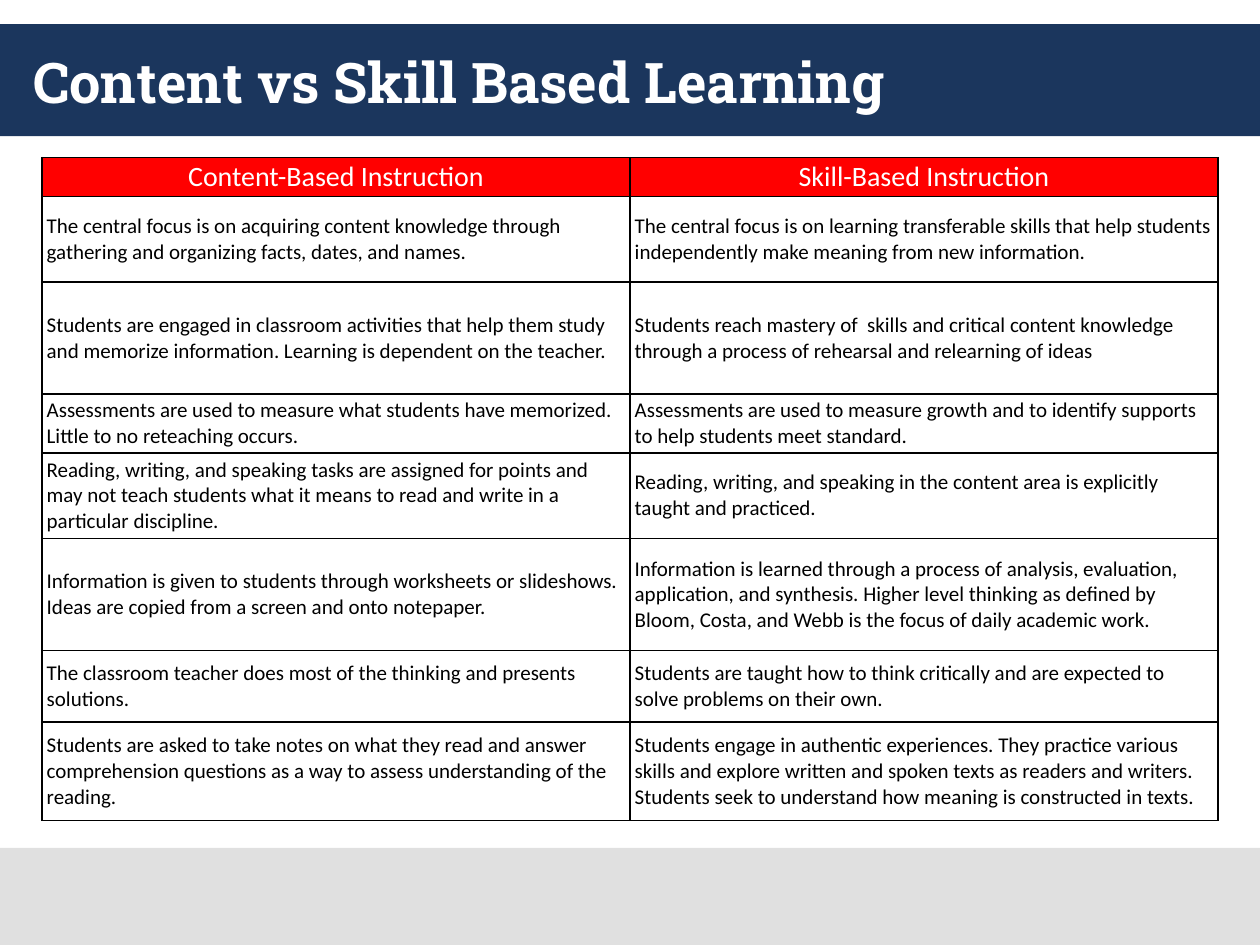
"""Build a slide with a table comparing content-based and skill-based instruction."""
from dataclasses import dataclass

from lxml import etree
from pptx import Presentation
from pptx.dml.color import RGBColor
from pptx.enum.shapes import MSO_SHAPE
from pptx.enum.text import MSO_ANCHOR, PP_ALIGN
from pptx.oxml.ns import qn
from pptx.util import Pt

RECTANGLE = MSO_SHAPE.RECTANGLE
MIDDLE = MSO_ANCHOR.MIDDLE
LEFT, CENTER = PP_ALIGN.LEFT, PP_ALIGN.CENTER


@dataclass(frozen=True)
class Theme:
    navy: str = "1B365D"
    grey: str = "E0E0E0"
    red: str = "FF0000"
    white: str = "FFFFFF"
    black: str = "000000"
    title_font: str = "Roboto Slab"
    table_font: str = "Calibri"
    title_size: int = 32
    header_size: int = 16
    body_size: int = 12


THEME = Theme()
SLIDE_WIDTH, SLIDE_HEIGHT = 720, 540
TABLE_LEFT, TABLE_TOP = 24, 90
TABLE_WIDTH = SLIDE_WIDTH - 2 * TABLE_LEFT
ROW_HEIGHTS = [22.3, 49, 64, 33.5, 49, 64, 41, 56.2]
BANDS = [(13.8, 64, THEME.navy), (484.5, 55.5, THEME.grey)]
ROWS = [
    ("Content-Based Instruction", "Skill-Based Instruction"),
    ("The central focus is on acquiring content knowledge through gathering and organizing facts, dates, and names.",
     "The central focus is on learning transferable skills that help students independently make meaning from new "
     "information."),
    ("Students are engaged in classroom activities that help them study and memorize information. Learning is "
     "dependent on the teacher.",
     "Students reach mastery of  skills and critical content knowledge through a process of rehearsal and relearning "
     "of ideas"),
    ("Assessments are used to measure what students have memorized. Little to no reteaching occurs.",
     "Assessments are used to measure growth and to identify supports to help students meet standard."),
    ("Reading, writing, and speaking tasks are assigned for points and may not teach students what it means to read "
     "and write in a particular discipline.",
     "Reading, writing, and speaking in the content area is explicitly taught and practiced."),
    ("Information is given to students through worksheets or slideshows. Ideas are copied from a screen and onto "
     "notepaper.",
     "Information is learned through a process of analysis, evaluation, application, and synthesis. Higher level "
     "thinking as defined by Bloom, Costa, and Webb is the focus of daily academic work."),
    ("The classroom teacher does most of the thinking and presents solutions.",
     "Students are taught how to think critically and are expected to solve problems on their own."),
    ("Students are asked to take notes on what they read and answer comprehension questions as a way to assess "
     "understanding of the reading.",
     "Students engage in authentic experiences. They practice various  skills and explore written and spoken texts "
     "as readers and writers. Students seek to understand how meaning is constructed in texts."),
]


def set_font(paragraph, name, size, color, bold=False):
    font = paragraph.font
    font.name, font.size, font.bold = name, Pt(size), bold
    font.color.rgb = RGBColor.from_string(color)


def add_borders(cell, color, width):
    properties = cell._tc.get_or_add_tcPr()
    for side in ("a:lnL", "a:lnR", "a:lnT", "a:lnB"):
        line = etree.SubElement(properties, qn(side), w=str(Pt(width)))
        fill = etree.SubElement(line, qn("a:solidFill"))
        etree.SubElement(fill, qn("a:srgbClr"), val=color)


deck = Presentation()
deck.slide_width, deck.slide_height = Pt(SLIDE_WIDTH), Pt(SLIDE_HEIGHT)
page = deck.slides.add_slide(deck.slide_layouts[6])

for top, height, color in BANDS:
    band = page.shapes.add_shape(RECTANGLE, 0, Pt(top), Pt(SLIDE_WIDTH), Pt(height))
    band.shadow.inherit = False
    band.fill.solid()
    band.fill.fore_color.rgb = RGBColor.from_string(color)
    band.line.fill.background()

title = page.shapes.add_textbox(Pt(12), Pt(13.8), Pt(696), Pt(64.8))
title.text_frame.word_wrap = True
title.text_frame.vertical_anchor = MIDDLE
title_para = title.text_frame.paragraphs[0]
title_para.text = "Content vs Skill Based Learning"
set_font(title_para, THEME.title_font, THEME.title_size, THEME.white, bold=True)

table = page.shapes.add_table(
    len(ROWS), 2, Pt(TABLE_LEFT), Pt(TABLE_TOP), Pt(TABLE_WIDTH), Pt(sum(ROW_HEIGHTS))
).table
table.first_row = table.horz_banding = False
for column in table.columns:
    column.width = Pt(TABLE_WIDTH / 2)

for row_index, (texts, height) in enumerate(zip(ROWS, ROW_HEIGHTS)):
    is_header = row_index == 0
    table.rows[row_index].height = Pt(height)
    for cell, text in zip(table.rows[row_index].cells, texts):
        cell.vertical_anchor = MIDDLE
        cell.margin_left = cell.margin_right = Pt(2.7)
        cell.margin_top = cell.margin_bottom = Pt(1.35)
        add_borders(cell, THEME.black, 1)
        cell.text = text
        para = cell.text_frame.paragraphs[0]
        if is_header:
            cell.fill.solid()
            cell.fill.fore_color.rgb = RGBColor.from_string(THEME.red)
            para.alignment = CENTER
            set_font(para, THEME.table_font, THEME.header_size, THEME.white)
        else:
            cell.fill.background()
            para.alignment = LEFT
            set_font(para, THEME.table_font, THEME.body_size, THEME.black)

deck.save("out.pptx")
